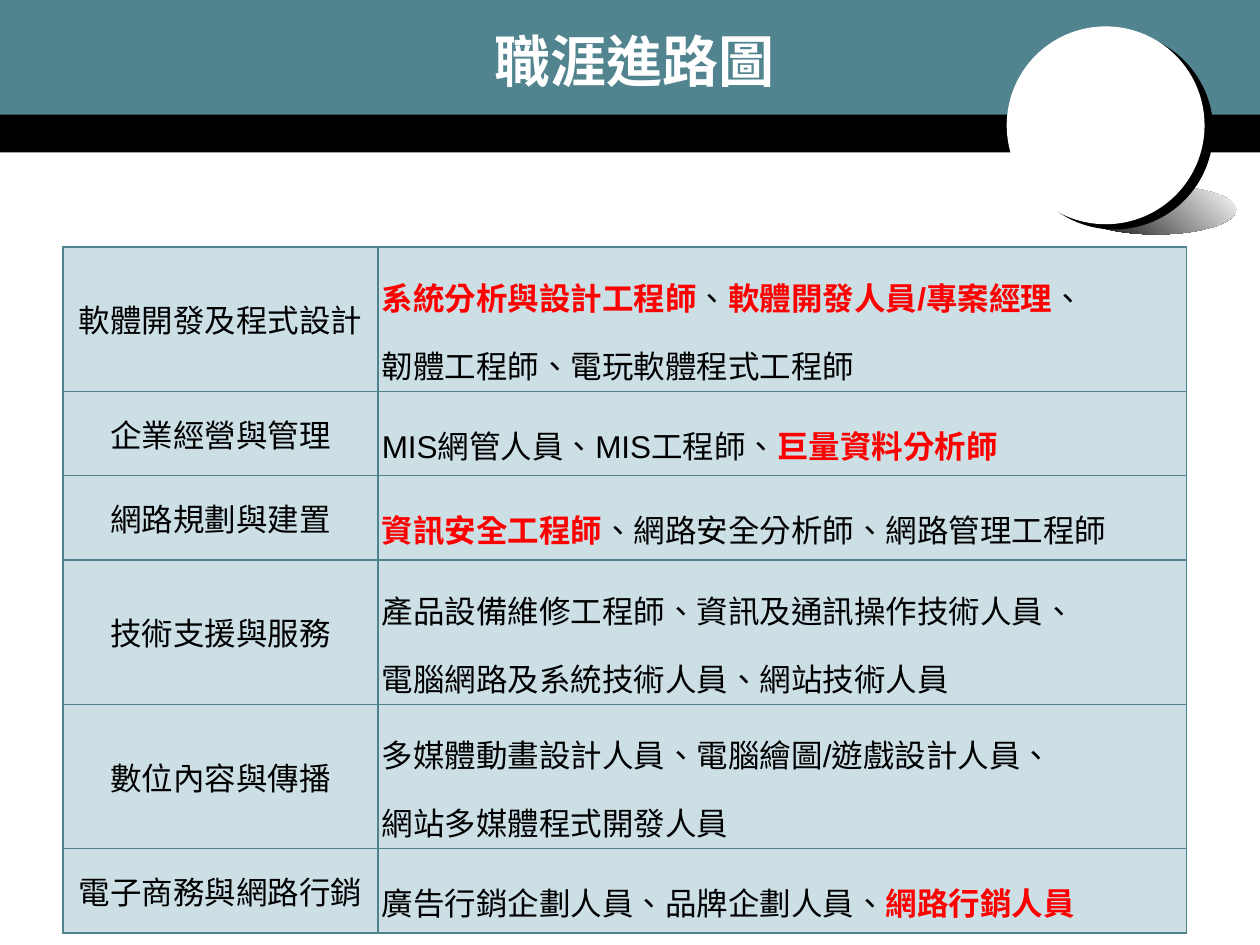
from typing import NamedTuple

from lxml import etree
from pptx import Presentation
from pptx.dml import color as col
from pptx.enum import lang, shapes, text
from pptx.oxml import ns
from pptx.util import Inches, Pt

TEAL, EDGE, PALE = "51848E", "4E828C", "CBDFE5"
RED, BLACK, WHITE = "FF0000", "000000", "FFFFFF"


class Block(NamedTuple):
    kind: shapes.MSO_SHAPE
    box: tuple[float, float, float, float]
    fill: str


class Track(NamedTuple):
    field: str
    jobs: str  # stars enclose the highlighted jobs
    high: float


BARS = [
    Block(shapes.MSO_SHAPE.RECTANGLE, (0, 0.87, 10, 0.34), BLACK),
    Block(shapes.MSO_SHAPE.RECTANGLE, (0, 0, 10, 0.91), TEAL),
]
SHADE = Block(shapes.MSO_SHAPE.OVAL, (8.54, 1.47, 1.27, 0.39), BLACK)
DISC = Block(shapes.MSO_SHAPE.OVAL, (7.99, 0.21, 1.57, 1.57), WHITE)

ONE, TWO = 0.67, 0.87
TRACKS = [
    Track("軟體開發及程式設計",
          "*系統分析與設計工程師*、*軟體開發人員/專案經理*、\n韌體工程師、電玩軟體程式工程師", TWO),
    Track("企業經營與管理", "MIS網管人員、MIS工程師、*巨量資料分析師*", ONE),
    Track("網路規劃與建置", "*資訊安全工程師*、網路安全分析師、網路管理工程師", ONE),
    Track("技術支援與服務",
          "產品設備維修工程師、資訊及通訊操作技術人員、\n電腦網路及系統技術人員、網站技術人員", TWO),
    Track("數位內容與傳播",
          "多媒體動畫設計人員、電腦繪圖/遊戲設計人員、\n網站多媒體程式開發人員", TWO),
    Track("電子商務與網路行銷", "廣告行銷企劃人員、品牌企劃人員、*網路行銷人員*", ONE),
]
WIDE = [2.5, 6.42]


def rgb(code: str) -> col.RGBColor:
    return col.RGBColor.from_string(code)


def apply(item, form: dict) -> None:
    for key, val in form.items():
        setattr(item, key, val)


def style(run, hue: str, **form) -> None:
    apply(run.font, form)
    run.font.language_id = lang.MSO_LANGUAGE_ID.TRADITIONAL_CHINESE
    run.font.color.rgb = rgb(hue)


def draw(slide, block: Block):
    shape = slide.shapes.add_shape(block.kind, *map(Inches, block.box))
    shape.shadow.inherit = False
    shape.fill.solid()
    shape.fill.fore_color.rgb = rgb(block.fill)
    shape.line.fill.background()
    return shape


def border(cell) -> None:
    props = cell._tc.get_or_add_tcPr()
    for spot, side in enumerate(("lnL", "lnR", "lnT", "lnB")):
        line = etree.Element(ns.qn(f"a:{side}"), w=str(Pt(0.75)))
        fill = etree.SubElement(line, ns.qn("a:solidFill"))
        etree.SubElement(fill, ns.qn("a:srgbClr"), val=EDGE)
        props.insert(spot, line)


def write(cell, words: str, pad: float, form: dict) -> None:
    cell.fill.solid()
    cell.fill.fore_color.rgb = rgb(PALE)
    border(cell)
    apply(cell, {
        "vertical_anchor": text.MSO_ANCHOR.MIDDLE,
        "margin_left": Inches(0.03), "margin_right": Inches(0.03),
        "margin_top": Inches(pad), "margin_bottom": Inches(pad),
    })
    for num, line in enumerate(words.split("\n")):
        frame = cell.text_frame
        para = frame.add_paragraph() if num else frame.paragraphs[0]
        apply(para, form)
        for spot, part in enumerate(line.split("*")):
            if part:
                run = para.add_run()
                run.text = part
                hot = spot % 2 == 1
                style(run, RED if hot else BLACK, name="Arial", size=Pt(18), bold=hot)


def main() -> None:
    deck = Presentation()
    apply(deck, {"slide_width": Inches(10), "slide_height": Inches(7.5)})
    slide = deck.slides.add_slide(deck.slide_layouts[5])

    # Header bars, and the disc with its shading
    for bar in BARS:
        draw(slide, bar)
    shade = draw(slide, SHADE)
    shade.fill.gradient()
    shade.fill.gradient_angle = 45
    for stop, hue, place in zip(shade.fill.gradient_stops, (BLACK, WHITE), (0, 1)):
        stop.color.rgb = rgb(hue)
        stop.position = place
    disc = draw(slide, DISC)
    glow = disc.element.spPr.find(ns.qn("a:effectLst"))
    cast = etree.SubElement(glow, ns.qn("a:outerShdw"), blurRad="0",
                            dist=str(Pt(5.8)), dir=str(31 * 60000),
                            algn="ctr", rotWithShape="0")
    etree.SubElement(cast, ns.qn("a:srgbClr"), val=BLACK)

    # Title, in front of the bars
    title = slide.shapes.title
    apply(title, {"left": Inches(0.5), "top": Inches(0.17),
                  "width": Inches(9.08), "height": Inches(0.62)})
    title.element.getparent().append(title.element)
    title.text_frame.vertical_anchor = text.MSO_ANCHOR.MIDDLE
    para = title.text_frame.paragraphs[0]
    para.alignment = text.PP_ALIGN.CENTER
    run = para.add_run()
    run.text = "職涯進路圖"
    face = "Noto Sans CJK SC"
    style(run, WHITE, name=face, size=Pt(32), bold=True)
    etree.SubElement(run.font._element, ns.qn("a:ea"), typeface=face)

    # Career table
    high = sum(track.high for track in TRACKS)
    table = slide.shapes.add_table(
        len(TRACKS), len(WIDE), Inches(0.5), Inches(1.96),
        Inches(sum(WIDE)), Inches(high)).table
    apply(table, {"first_row": False, "horz_banding": False})
    for column, width in zip(table.columns, WIDE):
        column.width = Inches(width)
    for row, track in zip(table.rows, TRACKS):
        row.height = Inches(track.high)
        field, jobs = row.cells
        write(field, track.field, 0.1, {"alignment": text.PP_ALIGN.CENTER})
        write(jobs, track.jobs, 0.03, {"line_spacing": 1.5})

    deck.save("out.pptx")


if __name__ == "__main__":
    main()
